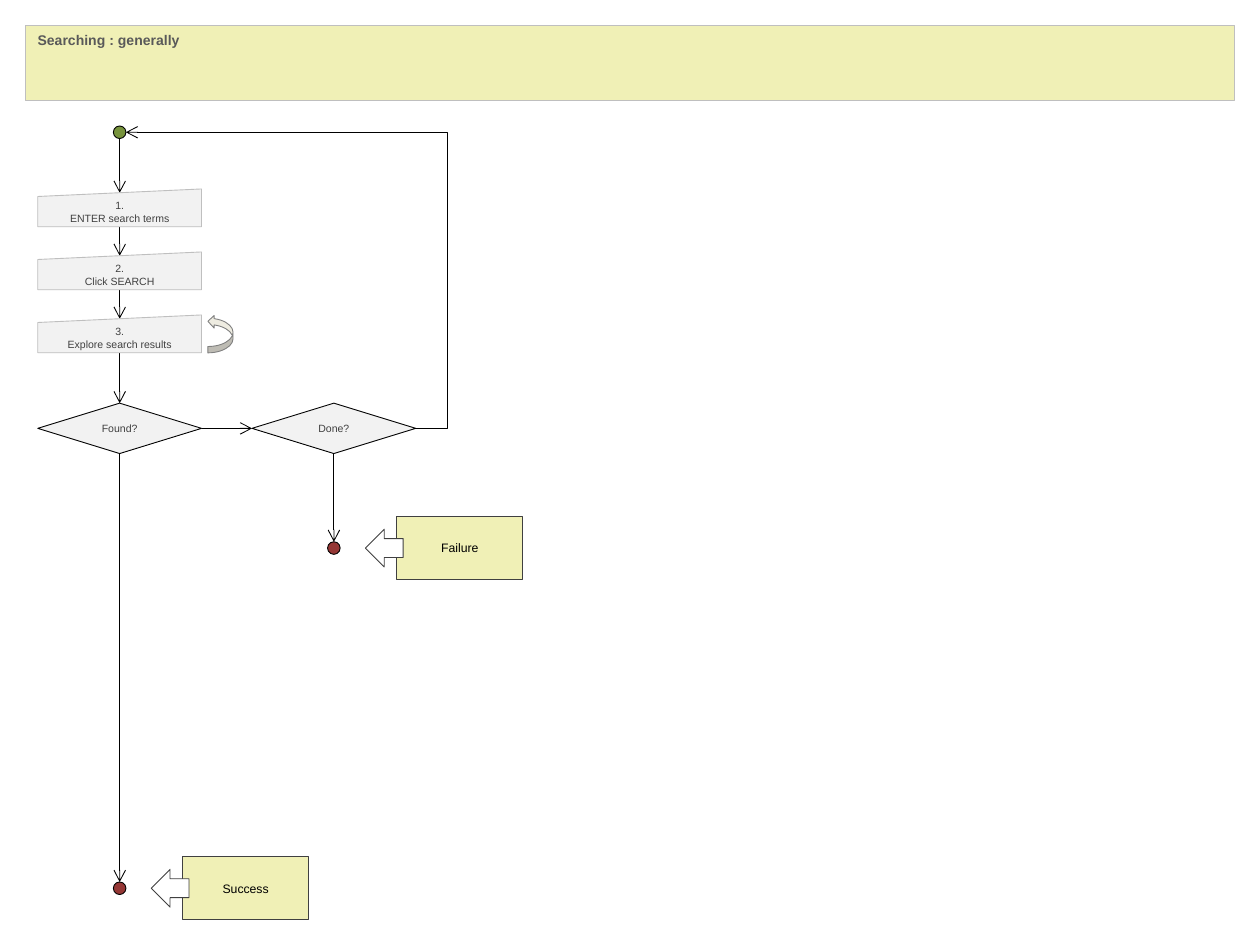
from copy import deepcopy
from dataclasses import dataclass
from typing import Any

from lxml import etree
from pptx import Presentation
from pptx import util as u
from pptx.dml.color import RGBColor
from pptx.enum import shapes, text
from pptx.oxml import ns

PX = 9144  # EMU per px, 100 px to the inch

BLACK = RGBColor(0x00, 0x00, 0x00)
WHITE = RGBColor(0xFF, 0xFF, 0xFF)
CHARCOAL = RGBColor(0x40, 0x40, 0x40)
SLATE = RGBColor(0x59, 0x59, 0x59)
GREY = RGBColor(0x80, 0x80, 0x80)
SILVER = RGBColor(0xBF, 0xBF, 0xBF)
PALE = RGBColor(0xF2, 0xF2, 0xF2)
CREAM = RGBColor(0xF0, 0xF0, 0xB6)
SAND = RGBColor(0xEE, 0xEC, 0xE1)
GREEN = RGBColor(0x77, 0x93, 0x3C)
RED = RGBColor(0x95, 0x37, 0x35)

KIND = shapes.MSO_SHAPE
LINE_WIDTH = u.Pt(0.5)
MAIN_X, SIDE_X = 95, 265  # centre lines of the two columns
NODE_W, DOT = 130, 10
DECISION_Y, DECISION_H = 320, 40
STEP_Y, STEP_GAP, STEP_H = 150, 50, 30
START_Y, FAILURE_Y, SUCCESS_Y = 100, 430, 700


@dataclass(frozen=True)
class Label:
    words: str
    size: float
    color: RGBColor
    bold: bool = False
    align: text.PP_ALIGN = text.PP_ALIGN.CENTER
    anchor: text.MSO_ANCHOR = text.MSO_ANCHOR.MIDDLE


@dataclass(frozen=True)
class Node:
    kind: shapes.MSO_SHAPE
    left: int
    top: int
    width: int
    height: int
    fill: RGBColor
    outline: RGBColor
    label: Label | None = None
    rotation: int = 0


@dataclass(frozen=True)
class Flow:
    x1: int
    y1: int
    x2: int
    y2: int
    bend: float | None = None  # elbow position as a share of the width


def apply(target: Any, values: dict[str, Any]) -> None:
    for name, value in values.items():
        setattr(target, name, value)


def write_label(shape: Any, label: Label) -> None:
    frame = shape.text_frame
    frame.text = label.words
    apply(frame, {"word_wrap": True, "vertical_anchor": label.anchor})
    paragraph = frame.paragraphs[0]
    paragraph.alignment = label.align
    for run in paragraph.runs:
        apply(run.font, {"name": "Arial", "size": u.Pt(label.size),
                         "bold": label.bold})
        run.font.color.rgb = label.color
    # Line breaks take the text size too
    run_format = next(shape.element.iter(ns.qn("a:rPr")))
    for line_break in shape.element.iter(ns.qn("a:br")):
        line_break.append(deepcopy(run_format))


def draw_node(slide: Any, node: Node) -> None:
    shape = slide.shapes.add_shape(
        node.kind, node.left * PX, node.top * PX, node.width * PX, node.height * PX)
    shape.rotation = node.rotation
    shape.shadow.inherit = False
    shape.fill.solid()
    shape.fill.fore_color.rgb = node.fill
    shape.line.color.rgb = node.outline
    shape.line.width = LINE_WIDTH
    if node.label:
        write_label(shape, node.label)


def draw_flow(slide: Any, flow: Flow) -> None:
    connector_type = shapes.MSO_CONNECTOR
    route = connector_type.STRAIGHT if flow.bend is None else connector_type.ELBOW
    connector = slide.shapes.add_connector(
        route, flow.x1 * PX, flow.y1 * PX, flow.x2 * PX, flow.y2 * PX)
    connector.line.color.rgb = BLACK
    connector.line.width = LINE_WIDTH
    properties = connector.element.spPr
    line = properties.find(ns.qn("a:ln"))
    etree.SubElement(line, ns.qn("a:tailEnd"), type="arrow")
    etree.SubElement(properties, ns.qn("a:effectLst"))
    if flow.bend is not None:
        adjustments = next(properties.iter(ns.qn("a:avLst")))
        etree.SubElement(adjustments, ns.qn("a:gd"), name="adj1",
                         fmla=f"val {round(flow.bend * 100000)}")


def decision(center: int, words: str) -> Node:
    return Node(KIND.FLOWCHART_DECISION, center - NODE_W // 2, DECISION_Y, NODE_W,
                DECISION_H, PALE, BLACK, Label(words, 6, CHARCOAL))


def dot(center: int, top: int, fill: RGBColor) -> Node:
    return Node(KIND.OVAL, center - DOT // 2, top, DOT, DOT, fill, BLACK)


def step(index: int, words: str) -> Node:
    return Node(KIND.FLOWCHART_MANUAL_INPUT, MAIN_X - NODE_W // 2,
                STEP_Y + index * STEP_GAP, NODE_W, STEP_H, PALE, SILVER,
                Label(f"{index + 1}.\v{words}", 6, CHARCOAL))


def outcome(center: int, dot_top: int, words: str) -> list[Node]:
    return [
        Node(KIND.RECTANGLE, center + 50, dot_top - 20, 100, 50, CREAM, CHARCOAL,
             Label(words, 7, BLACK)),
        Node(KIND.LEFT_ARROW, center + 25, dot_top - 10, 30, 30, WHITE, CHARCOAL),
    ]


def main() -> None:
    deck = Presentation()
    apply(deck, {"slide_width": 1000 * PX, "slide_height": 750 * PX})
    slide = deck.slides.add_slide(deck.slide_layouts[6])

    # Decisions and end points
    checkpoints = [
        decision(MAIN_X, "Found?"),
        dot(MAIN_X, START_Y, GREEN),
        dot(MAIN_X, SUCCESS_Y, RED),
        decision(SIDE_X, "Done?"),
        dot(SIDE_X, FAILURE_Y, RED),
    ]

    # Flow down both columns, across, and back to the start
    decision_mid = DECISION_Y + DECISION_H // 2
    decision_end = DECISION_Y + DECISION_H
    half = NODE_W // 2
    step_tops = [STEP_Y + index * STEP_GAP for index in range(3)]
    leaving = [START_Y + DOT] + [top + STEP_H for top in step_tops]
    entering = [top + STEP_H // 10 for top in step_tops] + [DECISION_Y]
    flows = [Flow(MAIN_X, y1, MAIN_X, y2) for y1, y2 in zip(leaving, entering)]
    flows += [
        Flow(MAIN_X, decision_end, MAIN_X, SUCCESS_Y),
        Flow(SIDE_X, decision_end, SIDE_X, FAILURE_Y),
        Flow(MAIN_X + half, decision_mid, SIDE_X - half, decision_mid),
        Flow(SIDE_X + half, decision_mid, MAIN_X + DOT // 2, START_Y + DOT // 2,
             bend=-0.109),
    ]

    # Title band, steps, repeat arrow and outcomes
    title = Label("Searching : generally", 8, SLATE, True,
                  text.PP_ALIGN.LEFT, text.MSO_ANCHOR.TOP)
    steps = ["ENTER search terms", "Click SEARCH", "Explore search results"]
    details = [
        Node(KIND.RECTANGLE, 20, 20, 960, 60, CREAM, SILVER, title),
        *(step(index, words) for index, words in enumerate(steps)),
        Node(KIND.CURVED_UP_ARROW, 160, 255, 30, 20, SAND, GREY, rotation=270),
        *outcome(SIDE_X, FAILURE_Y, "Failure"),
        *outcome(MAIN_X, SUCCESS_Y, "Success"),
    ]

    for node in checkpoints:
        draw_node(slide, node)
    for flow in flows:
        draw_flow(slide, flow)
    for node in details:
        draw_node(slide, node)

    deck.save("out.pptx")


if __name__ == "__main__":
    main()
